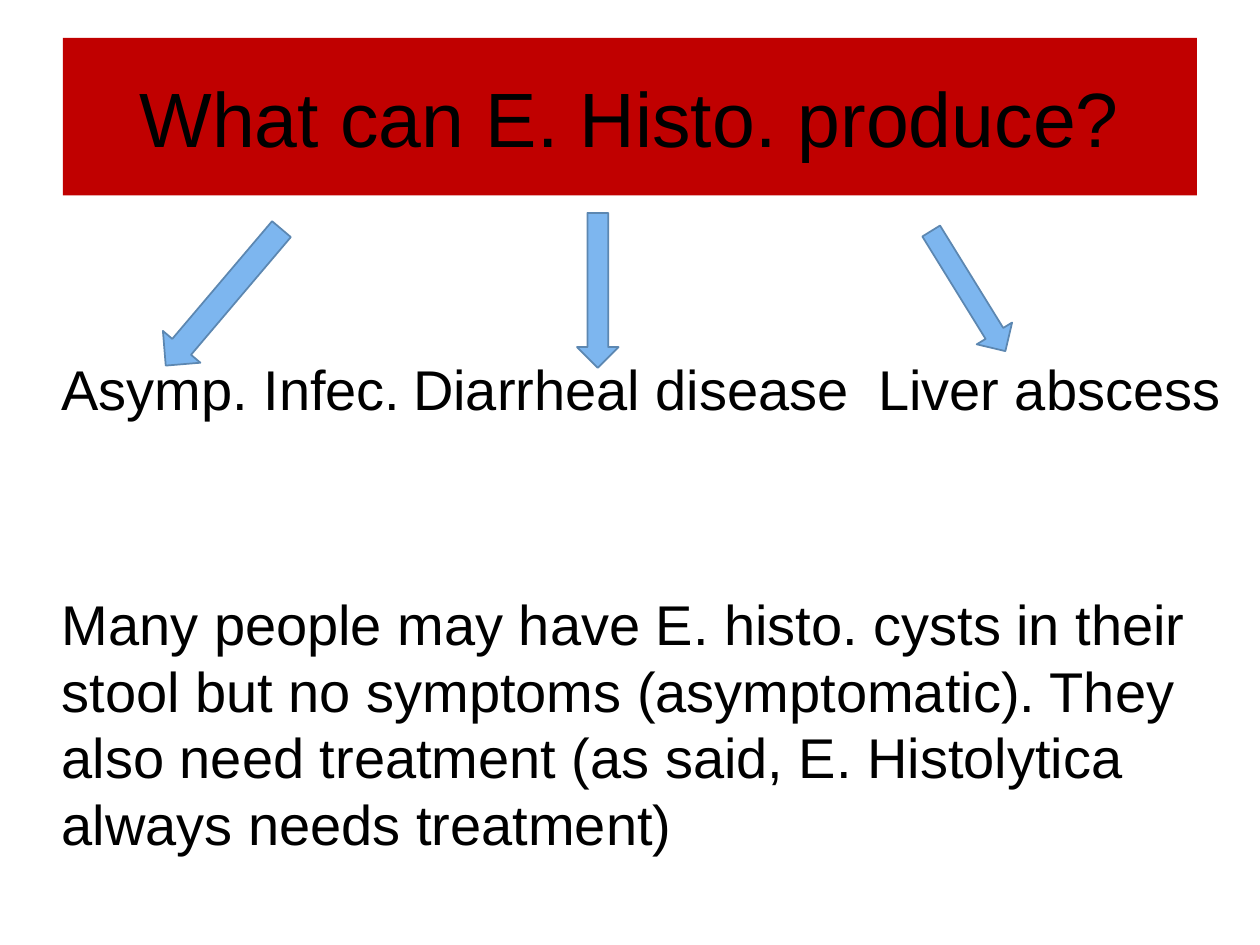
import pptx
import pptx.dml.color
import pptx.enum.shapes
import pptx.enum.text
import pptx.oxml.ns
import pptx.util
from lxml import etree

COLORS = {"red": "C00000", "black": "000000", "blue": "7DB6EF", "edge": "5C87B1"}
COLS, ROWS = 100, 75
SHAPE = pptx.enum.shapes.MSO_SHAPE
ALIGN = pptx.enum.text.PP_ALIGN
ANCHOR = pptx.enum.text.MSO_ANCHOR


class Deck:
    font = "Arial"

    def __init__(self):
        self.prs = pptx.Presentation()
        self.prs.slide_width = pptx.util.Inches(10)
        self.prs.slide_height = pptx.util.Inches(7.5)
        self.slide = self.prs.slides.add_slide(self.prs.slide_layouts[6])

    def color(self, name):
        return pptx.dml.color.RGBColor.from_string(COLORS[name])

    def col(self, n):
        return round(n * self.prs.slide_width / COLS)

    def grid(self, x, y, w, h):
        row = self.prs.slide_height / ROWS
        return self.col(x), round(y * row), self.col(w), round(h * row)

    def shape(self, kind, box, fill, line=None, turn=0):
        shape = self.slide.shapes.add_shape(kind, *self.grid(*box))
        shape.shadow.inherit = False
        shape.rotation = turn
        shape.fill.solid()
        shape.fill.fore_color.rgb = self.color(fill)
        if line:
            shape.line.color.rgb = self.color(line)
            shape.line.width = pptx.util.Pt(1)
        else:
            shape.line.fill.background()
        return shape

    def run(self, para, text, size):
        run = para.add_run()
        run.text = text
        run.font.name = self.font
        run.font.size = pptx.util.Pt(size)
        run.font.color.rgb = self.color("black")

    def title(self, box, text):
        frame = self.shape(SHAPE.RECTANGLE, box, "red").text_frame
        frame.vertical_anchor = ANCHOR.MIDDLE
        para = frame.paragraphs[0]
        para.alignment = ALIGN.CENTER
        self.run(para, text, 44)

    def tabs(self, para, stops):
        props = para._p.get_or_add_pPr()
        tabs = etree.SubElement(props, pptx.oxml.ns.qn("a:tabLst"))
        for stop in stops:
            etree.SubElement(tabs, pptx.oxml.ns.qn("a:tab"),
                             pos=str(self.col(stop)), algn="l")

    def body(self, box, items, stops, note, gap):
        frame = self.slide.shapes.add_textbox(*self.grid(*box)).text_frame
        frame.word_wrap = True
        frame.margin_top = 0
        head, tail = frame.paragraphs[0], frame.add_paragraph()
        self.tabs(head, stops)
        tail.space_before = pptx.util.Pt(gap)
        for para, text in ((head, "\t".join(items)), (tail, note)):
            para.line_spacing = pptx.util.Pt(38.1)
            self.run(para, text, 32)

    def arrow(self, box, turn=0):
        self.shape(SHAPE.DOWN_ARROW, box, "blue", "edge", turn)


def main():
    deck = Deck()

    # Heading band
    deck.title((5, 3, 90, 12.5), "What can E. Histo. produce?")

    # Three outcomes and the note below them
    deck.body(
        (3.9, 28.2, 95.2, 44.3),
        ("Asymp. Infec.", "Diarrheal disease", "Liver abscess"),
        (27.9, 64.8),
        "Many people may have E. histo. cysts in their stool but no symptoms "
        "(asymptomatic). They also need treatment (as said, E. Histolytica "
        "always needs treatment)",
        gap=96,
    )

    # Arrows from the heading to each outcome
    deck.arrow((15.8, 16.5, 3.9, 14.2), 40.3)
    deck.arrow((45.8, 16.9, 3.3, 12.3))
    deck.arrow((75.2, 17.5, 3.3, 11.2), 328.3)

    deck.prs.save("out.pptx")


if __name__ == "__main__":
    main()
